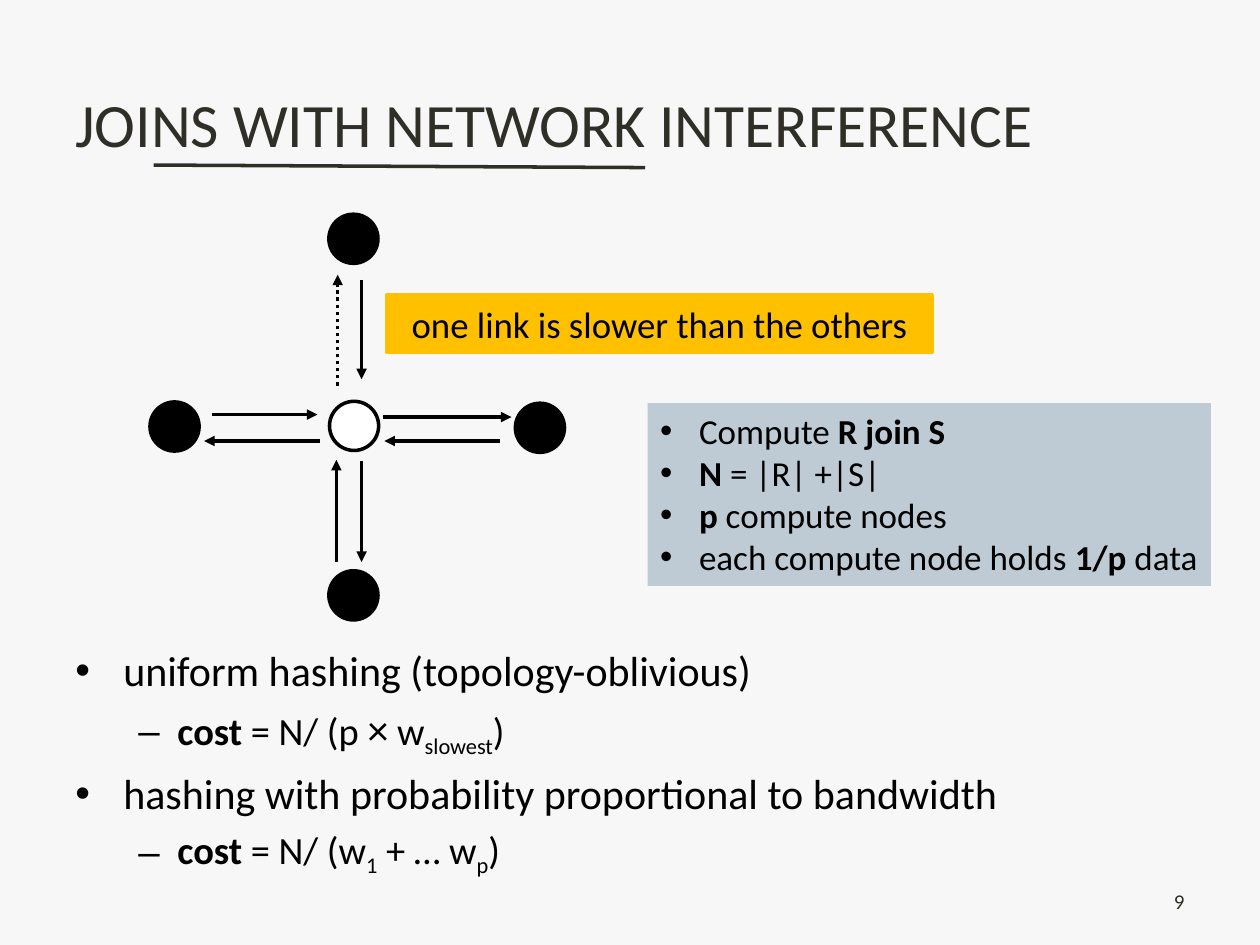
from pptx import Presentation
from pptx.dml.color import RGBColor
from pptx.enum.dml import MSO_LINE
from pptx.enum.shapes import MSO_CONNECTOR, MSO_SHAPE
from pptx.enum.text import MSO_ANCHOR, PP_ALIGN
from pptx.oxml.ns import qn
from pptx.util import Inches, Pt
from lxml import etree

STRAIGHT = MSO_CONNECTOR.STRAIGHT
RECTANGLE, OVAL = MSO_SHAPE.RECTANGLE, MSO_SHAPE.OVAL
TOP, MIDDLE = MSO_ANCHOR.TOP, MSO_ANCHOR.MIDDLE
LEFT, CENTER, RIGHT = PP_ALIGN.LEFT, PP_ALIGN.CENTER, PP_ALIGN.RIGHT
DOTTED = MSO_LINE.ROUND_DOT

PAPER = RGBColor(0xF7, 0xF7, 0xF7)
INK = RGBColor(0x2F, 0x2F, 0x28)
BLACK = RGBColor(0, 0, 0)
WHITE = RGBColor(0xFF, 0xFF, 0xFF)
AMBER = RGBColor(0xFF, 0xC0, 0x00)
MIST = RGBColor(0xBE, 0xCB, 0xD5)

COLUMNS, ROWS = 100, 75
SLIDE_WIDTH, SLIDE_HEIGHT = Inches(10), Inches(7.5)
NODE_SIZE = 3.9
STROKE = Pt(2)

HUB = (28.1, 33.8)
NODES = [(13.85, 33.85), (28.05, 47.25), (42.85, 33.95), (28.05, 18.95)]
SLOW_LINK = (26.8, 30.6, 26.8, 21.8)
LINKS = [
    (28.7, 22.2, 28.7, 30.1),
    (28.7, 36.6, 28.7, 44.6),
    (26.7, 44.6, 26.7, 36.5),
    (16.8, 32.9, 25.2, 32.9),
    (25.4, 35, 16.2, 35),
    (30.4, 33.1, 40.6, 33.1),
    (39.7, 35, 30.5, 35),
]

BOLD = {"bold": True}
SUBSCRIPT = {"baseline": "-25000"}
SETUP = [
    [("Compute ", {}), ("R join S", BOLD)],
    [("N", BOLD), (" = |R| +|S|", {})],
    [("p", BOLD), (" compute nodes", {})],
    [("each compute node holds ", {}), ("1/p ", BOLD), ("data", {})],
]
STRATEGIES = [
    (0, [("uniform hashing (topology-oblivious)", {})]),
    (1, [("cost", BOLD), (" = N/ (p ", {}), ("×", {"size": Pt(24)}), (" w", {}),
         ("slowest", SUBSCRIPT), (")", {})]),
    (0, [("hashing with probability proportional to bandwidth", {})]),
    (1, [("cost", BOLD), (" = N/ (w", {}), ("1", SUBSCRIPT), (" + … w", {}),
         ("p", SUBSCRIPT), (")", {})]),
]
LEVELS = [
    {"size": 24, "bullet": "•", "margin": 0.38, "hanging": 0.38},
    {"size": 22, "bullet": "–", "margin": 0.81, "hanging": 0.31},
]


def x(columns):
    return round(SLIDE_WIDTH * columns / COLUMNS)


def y(rows):
    return round(SLIDE_HEIGHT * rows / ROWS)


def box(left, top, width, height):
    return x(left), y(top), x(width), y(height)


def apply_format(target, values):
    for name, value in values.items():
        setattr(target, name, value)


def write_runs(paragraph, pieces, size, color=BLACK):
    for text, extra in pieces:
        run = paragraph.add_run()
        run.text = text
        run.font.color.rgb = color
        apply_format(run.font, {"name": "Calibri", "size": Pt(size), "bold": False})
        for name, value in extra.items():
            if name in ("baseline", "cap"):
                run.font._element.set(name, value)
            else:
                setattr(run.font, name, value)


def set_bullet(paragraph, bullet, margin, hanging):
    properties = paragraph._p.get_or_add_pPr()
    properties.set("marL", str(Inches(margin)))
    properties.set("indent", str(-Inches(hanging)))
    etree.SubElement(properties, qn("a:buFont")).set("typeface", "Arial")
    etree.SubElement(properties, qn("a:buChar")).set("char", bullet)


def add_text(slide, place, anchor):
    frame = slide.shapes.add_textbox(*box(*place)).text_frame
    apply_format(frame, {"word_wrap": True, "vertical_anchor": anchor})
    return frame


def add_label(slide, place, pieces, size, align):
    paragraph = add_text(slide, place, MIDDLE).paragraphs[0]
    paragraph.alignment = align
    write_runs(paragraph, pieces, size, INK)


def add_block(slide, kind, place, fill, outline=None):
    block = slide.shapes.add_shape(kind, *box(*place))
    block.shadow.inherit = False
    block.fill.solid()
    block.fill.fore_color.rgb = fill
    if outline is None:
        block.line.fill.background()
    else:
        block.line.color.rgb = outline
        block.line.width = STROKE
    return block


def add_node(slide, center, fill):
    left, top = (middle - NODE_SIZE / 2 for middle in center)
    add_block(slide, OVAL, (left, top, NODE_SIZE, NODE_SIZE), fill, BLACK)


def add_line(slide, ends, color):
    x1, y1, x2, y2 = ends
    line = slide.shapes.add_connector(STRAIGHT, x(x1), y(y1), x(x2), y(y2))
    line.line.color.rgb = color
    line.line.width = STROKE
    etree.SubElement(line._element.spPr, qn("a:effectLst"))
    return line


def add_link(slide, ends, dash=None):
    link = add_line(slide, ends, BLACK)
    if dash is not None:
        link.line.dash_style = dash
    outline = link.line._get_or_add_ln()
    etree.SubElement(outline, qn("a:tailEnd")).set("type", "triangle")


def add_callout(slide):
    frame = add_block(slide, RECTANGLE, (30.7, 23.4, 43.3, 4.6), AMBER, AMBER).text_frame
    apply_format(frame, {"word_wrap": True, "vertical_anchor": MIDDLE})
    frame.paragraphs[0].alignment = CENTER
    write_runs(frame.paragraphs[0], [("one link is slower than the others", {})], 21)


def add_setup(slide):
    frame = add_block(slide, RECTANGLE, (51.4, 32, 44.7, 14.5), MIST).text_frame
    apply_format(frame, {"word_wrap": False, "vertical_anchor": TOP})
    for index, pieces in enumerate(SETUP):
        paragraph = frame.add_paragraph() if index else frame.paragraphs[0]
        paragraph.alignment = LEFT
        set_bullet(paragraph, "•", 0.31, 0.31)
        write_runs(paragraph, pieces, 20)


def add_strategies(slide):
    frame = add_text(slide, (5, 50.7, 85.8, 20.6), TOP)
    for index, (depth, pieces) in enumerate(STRATEGIES):
        level = LEVELS[depth]
        paragraph = frame.add_paragraph() if index else frame.paragraphs[0]
        apply_format(paragraph, {"level": depth, "space_before": Pt(level["size"] * 0.2)})
        set_bullet(paragraph, level["bullet"], level["margin"], level["hanging"])
        write_runs(paragraph, pieces, level["size"])


def add_network(slide):
    for center in NODES:
        add_node(slide, center, BLACK)
    add_node(slide, HUB, WHITE)
    add_link(slide, SLOW_LINK, DOTTED)
    for ends in LINKS:
        add_link(slide, ends)


def main():
    deck = Presentation()
    apply_format(deck, {"slide_width": SLIDE_WIDTH, "slide_height": SLIDE_HEIGHT})
    slide = deck.slides.add_slide(deck.slide_layouts[6])
    slide.background.fill.solid()
    slide.background.fill.fore_color.rgb = PAPER
    title = [("joins with network interference", {"cap": "small"})]
    add_label(slide, (5, 3, 90, 12.5), title, 44, LEFT)
    add_label(slide, (71.7, 69.5, 23.3, 4), [("9", {})], 12, RIGHT)
    add_line(slide, (12.2, 13.1, 51.2, 13.3), INK)
    add_strategies(slide)
    add_setup(slide)
    add_network(slide)
    add_callout(slide)
    deck.save("out.pptx")


if __name__ == "__main__":
    main()
